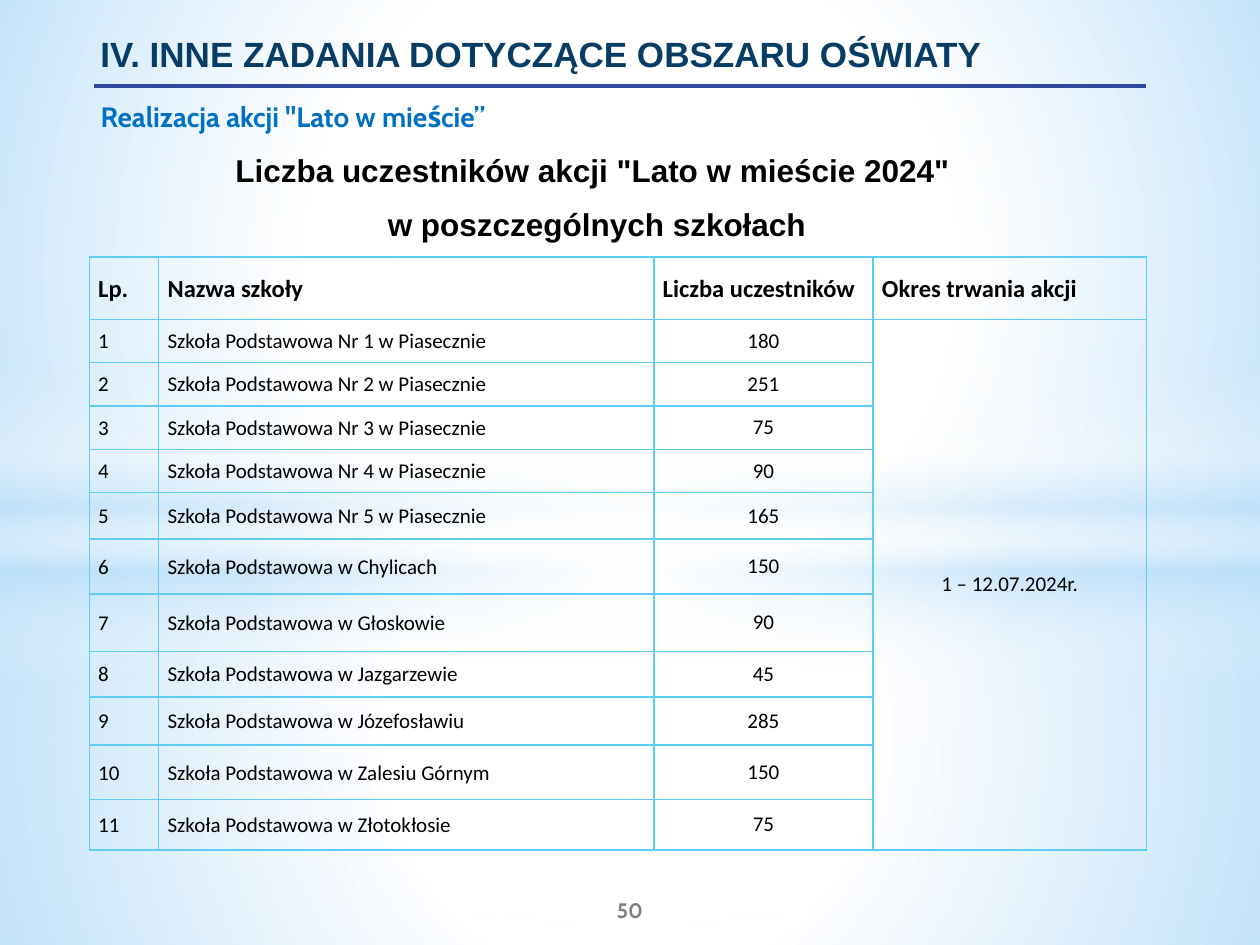
from dataclasses import dataclass

from pptx import Presentation
from pptx.dml.color import RGBColor
from pptx.enum.shapes import MSO_CONNECTOR, MSO_SHAPE
from pptx.enum.text import MSO_ANCHOR, MSO_AUTO_SIZE, PP_ALIGN
from pptx.oxml import parse_xml
from pptx.oxml.ns import nsdecls, qn
from pptx.util import Cm, Pt

CENTER, LEFT = PP_ALIGN.CENTER, PP_ALIGN.LEFT
MIDDLE, TOP = MSO_ANCHOR.MIDDLE, MSO_ANCHOR.TOP
NO_FIT = MSO_AUTO_SIZE.NONE
STRAIGHT = MSO_CONNECTOR.STRAIGHT
RECTANGLE, OVAL = MSO_SHAPE.RECTANGLE, MSO_SHAPE.OVAL


@dataclass(frozen=True)
class Theme:
    """Colours, fonts and type sizes of the slide."""
    white: str = "FFFFFF"
    sky: str = "B4DCFA"
    navy: str = "073C65"
    rule: str = "31489F"
    blue: str = "0070C0"
    grid: str = "5ECCF3"
    grey: str = "7F7F7F"
    black: str = "000000"
    heading_font: str = "Arial"
    accent_font: str = "Cabin"
    table_font: str = "Calibri"
    title_size: int = 20
    heading_size: int = 18
    subtitle_size: int = 16
    header_size: int = 14
    body_size: int = 12
    loose: float = 1.04


THEME = Theme()
RADIAL = ('<a:path path="circle"><a:fillToRect l="50000" t="50000" '
          'r="50000" b="50000"/></a:path>')
VERTICAL = '<a:lin ang="5400000" scaled="0"/>'

GLOWS = [
    (RECTANGLE, (0, 10.74, 25.4, 8.31), RADIAL,
     [(0, THEME.white, 91), (37, THEME.white, 76), (100, THEME.sky, 79)]),
    (RECTANGLE, (0, 0, 25.4, 10.74), RADIAL,
     [(0, THEME.white, 89), (48, THEME.white, 62), (100, THEME.sky, 79)]),
    (RECTANGLE, (0, 7.37, 25.4, 6.35), VERTICAL,
     [(0, THEME.white, 0), (29, THEME.white, 30), (45, THEME.sky, 40),
      (55, THEME.white, 26), (65, THEME.sky, 60), (100, THEME.white, 0)]),
    (OVAL, (0, 4.45, 25.4, 14.17), RADIAL,
     [(0, THEME.white, 100), (54, THEME.white, 0)]),
]
HEADER = ["Lp.", "Nazwa szkoły", "Liczba uczestników", "Okres trwania akcji"]
SCHOOLS = [
    ("Nr 1 w Piasecznie", 180), ("Nr 2 w Piasecznie", 251),
    ("Nr 3 w Piasecznie", 75), ("Nr 4 w Piasecznie", 90),
    ("Nr 5 w Piasecznie", 165), ("w Chylicach", 150),
    ("w Głoskowie", 90), ("w Jazgarzewie", 45),
    ("w Józefosławiu", 285), ("w Zalesiu Górnym", 150),
    ("w Złotokłosie", 75),
]
PERIOD = "1 – 12.07.2024r."
COLUMN_WIDTHS = [1.4, 9.98, 4.42, 5.51]
ROW_HEIGHTS = [1.26, 0.87, 0.87, 0.88, 0.87, 0.94,
               1.1, 1.16, 0.92, 0.97, 1.1, 1.01]


def apply(target, values):
    """Set every attribute named in values on target."""
    for name, value in values.items():
        setattr(target, name, value)


def lengths(box):
    """Turn centimetre numbers into lengths."""
    return [Cm(value) for value in box]


class SlideBuilder:
    """Holds the theme and the current slide and adds elements to it."""

    def __init__(self, slide, theme):
        self.slide = slide
        self.theme = theme

    def fill_text(self, frame, lines, font, size, color, bold=True, **layout):
        for index, line in enumerate(lines):
            paragraph = frame.paragraphs[0] if index == 0 else frame.add_paragraph()
            paragraph.text = line
            apply(paragraph, layout)
            apply(paragraph.font, {"name": font, "size": Pt(size), "bold": bold})
            paragraph.font.color.rgb = RGBColor.from_string(color)

    def glow(self, preset, box, direction, stops):
        glow = self.slide.shapes.add_shape(preset, *lengths(box))
        glow.shadow.inherit = False
        glow.line.fill.background()
        glow.fill.background()
        stop_xml = "".join(
            f'<a:gs pos="{position * 1000}"><a:srgbClr val="{color}">'
            f'<a:alpha val="{alpha * 1000}"/></a:srgbClr></a:gs>'
            for position, color, alpha in stops)
        gradient = parse_xml(
            f'<a:gradFill {nsdecls("a")} rotWithShape="1">'
            f'<a:gsLst>{stop_xml}</a:gsLst>{direction}</a:gradFill>')
        properties = glow._element.spPr
        properties.replace(properties.find(qn("a:noFill")), gradient)

    def title(self, text, box, indent):
        title = self.slide.shapes.title
        self.slide.shapes._spTree.append(title._element)
        apply(title, dict(zip(("left", "top", "width", "height"), lengths(box))))
        apply(title.text_frame, {"word_wrap": True, "auto_size": NO_FIT,
                                 "vertical_anchor": TOP})
        self.fill_text(title.text_frame, [text], self.theme.heading_font,
                       self.theme.title_size, self.theme.navy, alignment=LEFT)
        properties = title.text_frame.paragraphs[0]._p.get_or_add_pPr()
        properties.set("marL", str(Cm(indent)))
        properties.set("indent", "0")

    def text(self, lines, box, font, size, color, anchor=TOP, **layout):
        frame = self.slide.shapes.add_textbox(*lengths(box)).text_frame
        apply(frame, {"word_wrap": True, "vertical_anchor": anchor})
        self.fill_text(frame, lines, font, size, color, **layout)

    def rule(self, left, right, y):
        rule = self.slide.shapes.add_connector(
            STRAIGHT, *lengths((left, y, right, y)))
        rule.line.color.rgb = RGBColor.from_string(self.theme.rule)
        rule.line.width = Pt(2.25)
        rule._element.spPr.append(parse_xml(f'<a:effectLst {nsdecls("a")}/>'))

    def cell(self, cell, text, size, bold, **layout):
        apply(cell, {"margin_left": Cm(0.18), "margin_right": Cm(0.18),
                     "margin_top": 0, "margin_bottom": 0,
                     "vertical_anchor": MIDDLE})
        properties = cell._tc.get_or_add_tcPr()
        for side in ("lnL", "lnR", "lnT", "lnB"):
            properties.append(parse_xml(
                f'<a:{side} {nsdecls("a")} w="{Pt(1)}"><a:solidFill>'
                f'<a:srgbClr val="{self.theme.grid}"/></a:solidFill></a:{side}>'))
        cell.fill.background()
        self.fill_text(cell.text_frame, [text], self.theme.table_font, size,
                       self.theme.black, bold, **layout)

    def table(self, rows, left, top, widths, heights):
        box = (left, top, sum(widths), sum(heights))
        table = self.slide.shapes.add_table(
            len(rows), len(widths), *lengths(box)).table
        apply(table, {"first_row": False, "horz_banding": False})
        for column, width in zip(table.columns, widths):
            column.width = Cm(width)
        for row, height in zip(table.rows, heights):
            row.height = Cm(height)
        for r, row in enumerate(rows):
            header = r == 0
            size = self.theme.header_size if header else self.theme.body_size
            for c, text in enumerate(row):
                layout = ({"alignment": LEFT, "line_spacing": self.theme.loose}
                          if header or c < 2 else {"alignment": CENTER})
                self.cell(table.cell(r, c), text, size, header, **layout)
        table.cell(1, 3).merge(table.cell(len(rows) - 1, 3))


def main():
    """Build the slide and save it."""
    deck = Presentation()
    apply(deck, {"slide_width": Cm(25.4), "slide_height": Cm(19.05)})
    page = SlideBuilder(deck.slides.add_slide(deck.slide_layouts[5]), THEME)
    for glow in GLOWS:
        page.glow(*glow)
    page.text(["50"], (10.16, 17.83, 5.08, 1.02), THEME.accent_font,
              THEME.body_size, THEME.grey, anchor=MIDDLE, alignment=CENTER)
    page.title("IV. INNE ZADANIA DOTYCZĄCE OBSZARU OŚWIATY",
               (1.27, 0.53, 22.86, 2.21), 0.5)
    page.rule(1.9, 23.11, 1.73)
    page.text(['Realizacja akcji "Lato w mieście”'], (1.78, 1.88, 21.87, 0.94),
              THEME.accent_font, THEME.subtitle_size, THEME.blue)
    page.text(['Liczba uczestników akcji "Lato w mieście 2024" ',
               "w poszczególnych szkołach"], (1.47, 2.9, 21.13, 2.13),
              THEME.heading_font, THEME.heading_size, THEME.black,
              alignment=CENTER, line_spacing=THEME.loose, space_after=Pt(8))
    rows = [HEADER] + [
        [str(number), f"Szkoła Podstawowa {place}", str(participants),
         PERIOD if number == 1 else ""]
        for number, (place, participants) in enumerate(SCHOOLS, 1)]
    page.table(rows, 1.8, 5.18, COLUMN_WIDTHS, ROW_HEIGHTS)
    deck.save("out.pptx")


if __name__ == "__main__":
    main()
